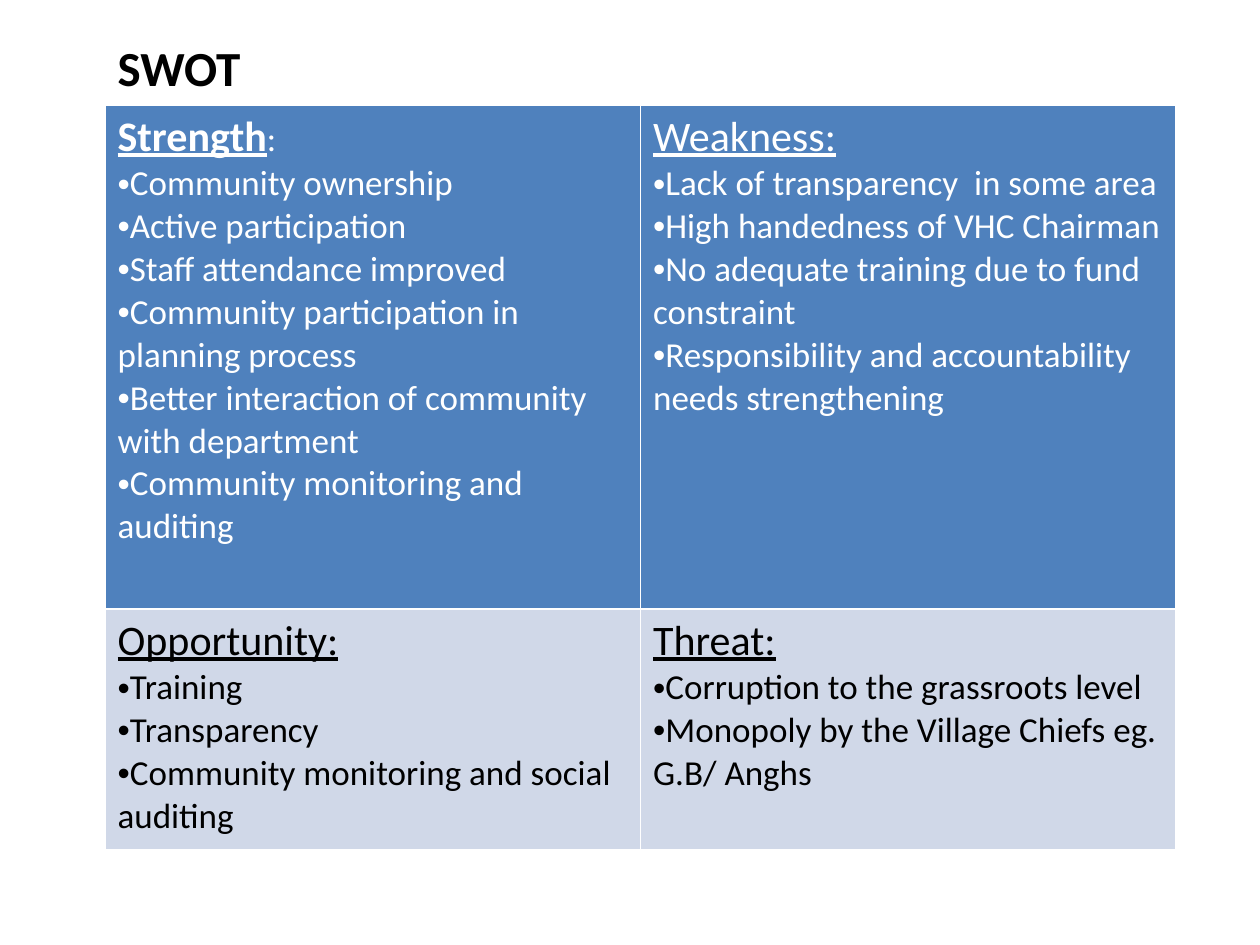
import pptx
import pptx.dml.color
import pptx.enum.text
import pptx.oxml
import pptx.oxml.ns
import pptx.util
from pptx.dml.color import RGBColor
from pptx.util import Pt

WHITE = RGBColor(0xFF, 0xFF, 0xFF)
BLACK = RGBColor(0x00, 0x00, 0x00)
BLUE = RGBColor(0x4F, 0x81, 0xBD)
PALE_BLUE = RGBColor(0xD0, 0xD8, 0xE8)
FONT = "Calibri"

# Content: each quadrant is a heading and its points
TITLE = "SWOT"
QUADRANTS = [
    [
        ("Strength:", [
            "Community ownership",
            "Active participation",
            "Staff attendance improved",
            "Community participation in planning process",
            "Better interaction of community with department",
            "Community monitoring and auditing",
        ]),
        ("Weakness:", [
            "Lack of transparency  in some area",
            "High handedness of VHC Chairman",
            "No adequate training due to fund constraint",
            "Responsibility and accountability needs strengthening",
        ]),
    ],
    [
        ("Opportunity:", [
            "Training",
            "Transparency",
            "Community monitoring and social auditing",
        ]),
        ("Threat:", [
            "Corruption to the grassroots level",
            "Monopoly by the Village Chiefs eg. G.B/ Anghs",
        ]),
    ],
]
ROW_STYLES = [(288, BLUE, WHITE), (137.5, PALE_BLUE, BLACK)]  # height, fill, text
LEFT, TABLE_TOP, COLUMN_WIDTH = 60, 60, 306


def add_span(para, text, size=20, color=BLACK, bold=False, underline=False):
    span = para.add_run()
    span.text = text
    font = span.font
    font.name, font.size, font.bold, font.underline = FONT, Pt(size), bold, underline
    font.color.rgb = color


def add_bullet(para):
    properties = para._p.get_or_add_pPr()
    properties.set("marL", "0")
    properties.set("indent", "0")
    namespace = pptx.oxml.ns.nsdecls("a")
    for tag in ('buFont typeface="Arial"', 'buChar char="•"'):
        properties.append(pptx.oxml.parse_xml(f"<a:{tag} {namespace}/>"))


def set_borders(cell, color, width):
    properties = cell._tc.get_or_add_tcPr()
    for index, side in enumerate("LRTB"):
        properties.insert(index, pptx.oxml.parse_xml(
            f'<a:ln{side} {pptx.oxml.ns.nsdecls("a")} w="{Pt(width)}">'
            f'<a:solidFill><a:srgbClr val="{color}"/></a:solidFill></a:ln{side}>'))


def fill_quadrant(cell, heading, points, color):
    para = cell.text_frame.paragraphs[0]
    if heading == "Strength:":  # the bold heading with a plain colon
        add_span(para, heading[:-1], size=24, color=color, bold=True, underline=True)
        add_span(para, ":", color=color)
    else:
        add_span(para, heading, size=24, color=color, underline=True)
    for point in points:
        para = cell.text_frame.add_paragraph()
        add_bullet(para)
        add_span(para, point, color=color)


def main():
    deck = pptx.Presentation()
    deck.slide_width, deck.slide_height = Pt(720), Pt(540)
    page = deck.slides.add_slide(deck.slide_layouts[5])

    # Title
    title = page.shapes.title
    title.left, title.top, title.width, title.height = Pt(LEFT), Pt(18), Pt(408), Pt(41)
    frame = title.text_frame
    frame.word_wrap = True
    frame.auto_size = pptx.enum.text.MSO_AUTO_SIZE.NONE
    frame.vertical_anchor = pptx.enum.text.MSO_ANCHOR.TOP
    frame.paragraphs[0].alignment = pptx.enum.text.PP_ALIGN.LEFT
    add_span(frame.paragraphs[0], TITLE, size=28, bold=True)

    # Two by two table
    height = sum(style[0] for style in ROW_STYLES)
    table = page.shapes.add_table(
        2, 2, Pt(LEFT), Pt(TABLE_TOP), Pt(2 * COLUMN_WIDTH), Pt(height)).table
    for column in table.columns:
        column.width = Pt(COLUMN_WIDTH)
    for row, quadrants, (row_height, fill, color) in zip(table.rows, QUADRANTS, ROW_STYLES):
        row.height = Pt(row_height)
        for cell, (heading, points) in zip(row.cells, quadrants):
            cell.fill.solid()
            cell.fill.fore_color.rgb = fill
            set_borders(cell, WHITE, 1)
            fill_quadrant(cell, heading, points, color)

    deck.save("out.pptx")


if __name__ == "__main__":
    main()
